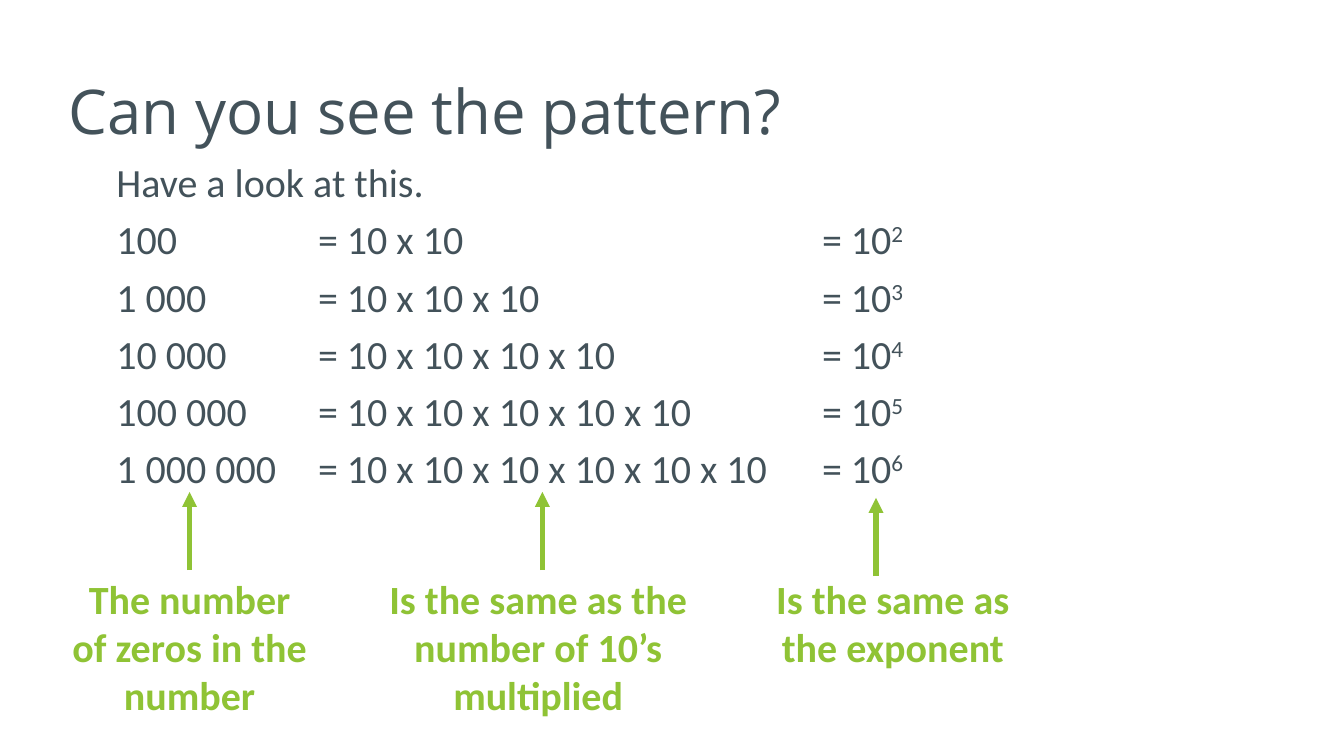
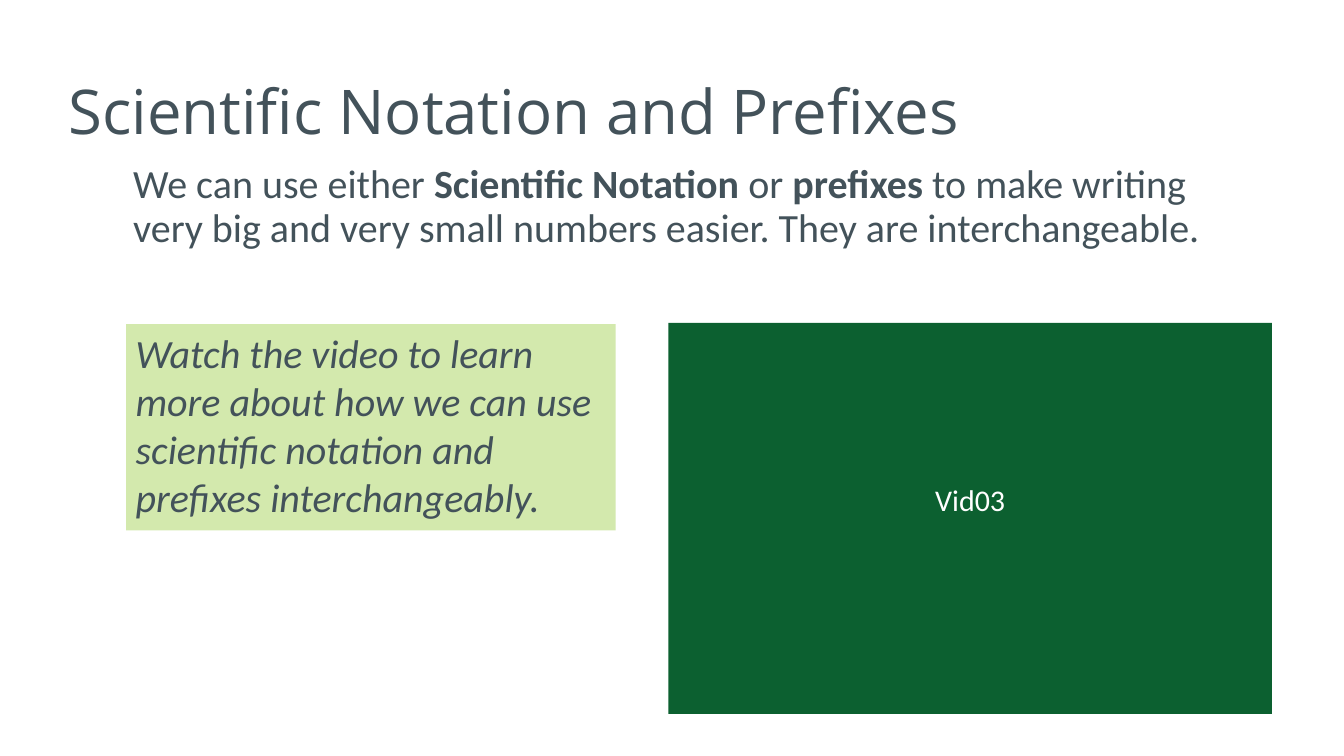
from lxml.etree import SubElement
from pptx import Presentation
from pptx.dml.color import RGBColor
from pptx.enum.shapes import MSO_CONNECTOR as Connector, MSO_SHAPE as Shape
from pptx.enum.text import MSO_ANCHOR as Anchor, PP_ALIGN as Align
from pptx.oxml.ns import qn
from pptx.util import Inches, Pt

COLOURS = {
    "ink": "43525A",
    "accent": "8FC335",
    "pale": "D3E9AD",
    "video": "0C6030",
    "white": "FFFFFF",
}
BODY_FONT, TITLE_FONT = "Calibri", "Open Sans"
TAB_STOPS = (1.68, 5.88)
BODY_SPACING = {"line_spacing": 0.9, "space_before": 8.4}


def colour(name):
    return RGBColor.from_string(COLOURS[name])


def add_text(frame, spans, first=False, size=24, font=BODY_FONT, ink="ink",
             bold=False, italic=False, align=Align.LEFT,
             line_spacing=None, space_before=None, tabs=()):
    """Add one paragraph; spans is a string or (text, style) pairs,
    where style is "", "bold" or "superscript"."""
    para = frame.paragraphs[0] if first else frame.add_paragraph()
    para.alignment = align
    if line_spacing:
        para.line_spacing = line_spacing
    if space_before:
        para.space_before = Pt(space_before)
    if tabs:
        tab_list = SubElement(para._p.get_or_add_pPr(), qn("a:tabLst"))
        for stop in tabs:
            SubElement(tab_list, qn("a:tab"), pos=str(Inches(stop)), algn="l")
    if isinstance(spans, str):
        spans = [(spans, "")]
    for text, style in spans:
        span = para.add_run()
        span.text = text
        span.font.name = font
        span.font.size = Pt(size)
        span.font.bold = bold or style == "bold"
        span.font.italic = italic
        span.font.color.rgb = colour(ink)
        if style == "superscript":
            span._r.get_or_add_rPr().set("baseline", "30000")


class Lesson:
    def __init__(self):
        self.deck = Presentation()
        self.deck.slide_width = Inches(11.2)
        self.deck.slide_height = Inches(6.3)
        self.page = None

    def new_page(self, title):
        self.page = self.deck.slides.add_slide(self.deck.slide_layouts[6])
        self.text_box((0.49, 0.34, 9.66, 1.22), [title], anchor=Anchor.MIDDLE,
                      size=37, font=TITLE_FONT, line_spacing=0.9)

    def fill_frame(self, box, paragraphs, anchor, **style):
        frame = box.text_frame
        frame.word_wrap = True
        frame.vertical_anchor = anchor
        frame.margin_left = frame.margin_right = Inches(0.08)
        frame.margin_top = frame.margin_bottom = Inches(0.04)
        for index, spans in enumerate(paragraphs):
            add_text(frame, spans, first=index == 0, **style)

    def text_box(self, place, paragraphs, anchor=Anchor.TOP, **style):
        box = self.page.shapes.add_textbox(*map(Inches, place))
        self.fill_frame(box, paragraphs, anchor, **style)
        return box

    def panel(self, place, fill, paragraphs, anchor=Anchor.TOP, **style):
        box = self.page.shapes.add_shape(Shape.RECTANGLE, *map(Inches, place))
        box.shadow.inherit = False
        box.fill.solid()
        box.fill.fore_color.rgb = colour(fill)
        box.line.fill.background()
        self.fill_frame(box, paragraphs, anchor, **style)
        return box

    def up_arrow(self, x, bottom, height=0.65):
        arrow = self.page.shapes.add_connector(
            Connector.STRAIGHT, Inches(x), Inches(bottom),
            Inches(x), Inches(bottom - height))
        arrow.line.color.rgb = colour("accent")
        arrow.line.width = Pt(3)
        SubElement(arrow.line._get_or_add_ln(), qn("a:tailEnd"), type="triangle")
        SubElement(arrow._element.spPr, qn("a:effectLst"))
        return arrow


def pattern_page(lesson):
    lesson.new_page("Can you see the pattern?")
    rows = ["Have a look at this."]
    for exponent in range(2, 7):
        number = f"{10 ** exponent:,}".replace(",", " ")
        product = " x ".join(["10"] * exponent)
        rows.append([(f"{number}\t= {product}\t= 10", ""),
                     (str(exponent), "superscript")])
    lesson.text_box((0.89, 1.32, 9.42, 2.91), rows, tabs=TAB_STOPS, **BODY_SPACING)

    callouts = [
        (0.49, 2.18, 1.31, "The number of zeros in the number"),
        (2.89, 3.19, 1.31, "Is the same as the number of 10’s multiplied"),
        (6.35, 2.18, 0.91, "Is the same as the exponent"),
    ]
    boxes = [lesson.text_box((left, 4.75, width, height), [text], bold=True,
                             ink="accent", align=Align.CENTER)
             for left, width, height, text in callouts]
    zeros_arrow = lesson.up_arrow(1.58, 4.75)
    zeros_arrow.begin_connect(boxes[0], 0)
    lesson.up_arrow(4.52, 4.75)
    lesson.up_arrow(7.3, 4.8)


def notation_page(lesson):
    lesson.new_page("Scientific Notation and Prefixes")
    lesson.text_box((1.03, 1.33, 9.09, 1.04), [[
        ("We can use either ", ""),
        ("Scientific Notation ", "bold"),
        ("or ", ""),
        ("prefixes", "bold"),
        (" to make writing very big and very small numbers easier. "
         "They are interchangeable.", ""),
    ]], **BODY_SPACING)
    lesson.panel((1.05, 2.7, 4.08, 1.72), "pale",
                 ["Watch the video to learn more about how we can use "
                  "scientific notation and prefixes interchangeably."],
                 italic=True)
    video = lesson.panel((5.57, 2.69, 5.03, 3.26), "video", ["Vid03"],
                         anchor=Anchor.MIDDLE, size=18, ink="white",
                         align=Align.CENTER)
    video.text_frame.margin_bottom = Inches(0.35)


def main():
    lesson = Lesson()
    pattern_page(lesson)
    notation_page(lesson)
    lesson.deck.save("out.pptx")


if __name__ == "__main__":
    main()
